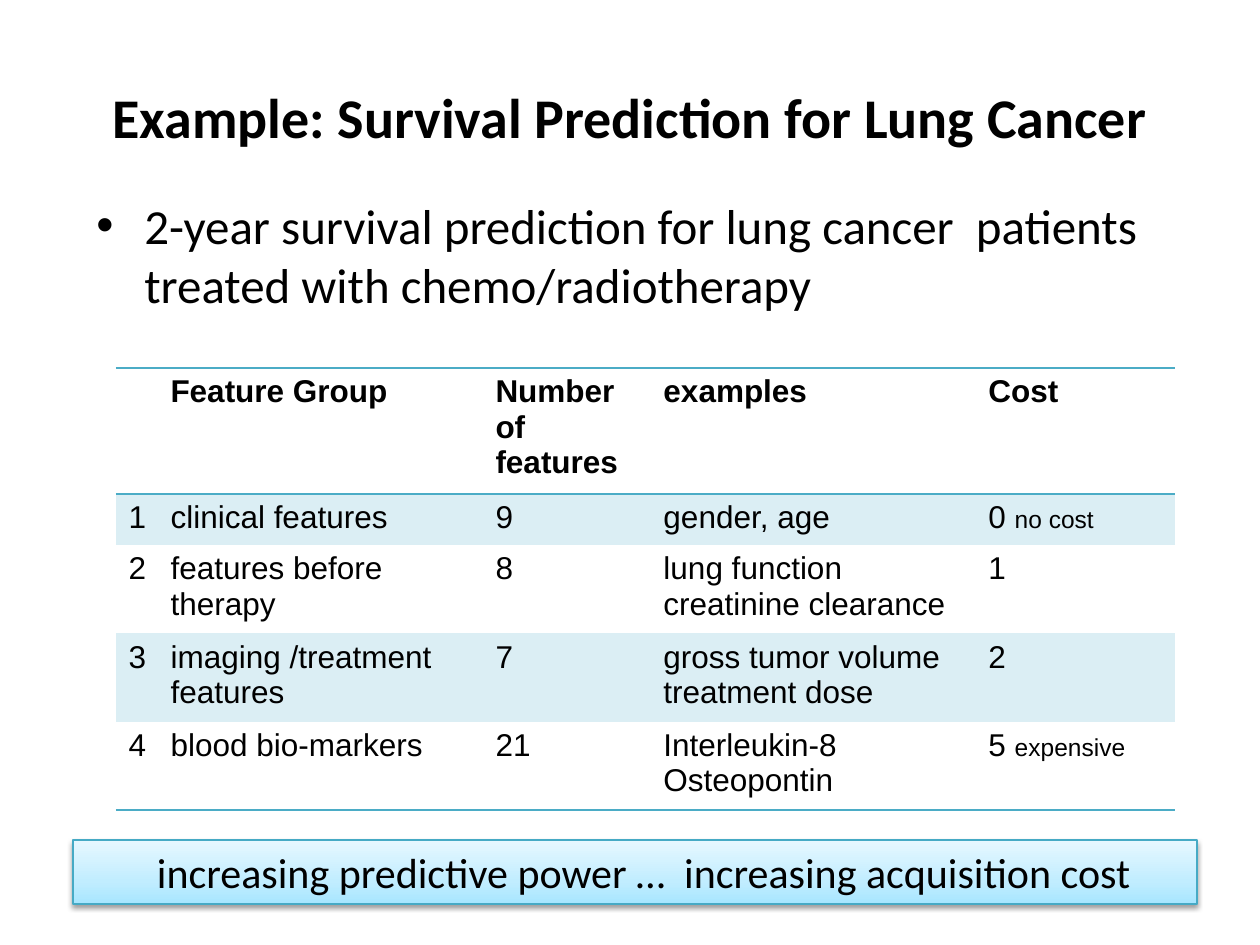
"""Build a slide on survival prediction for lung cancer."""
from copy import deepcopy

from lxml.etree import SubElement
from pptx import Presentation
from pptx.dml.color import RGBColor as RGB
from pptx.enum.shapes import MSO_SHAPE as SHAPE
from pptx.enum.text import MSO_ANCHOR as ANCHOR, PP_ALIGN as ALIGN
from pptx.oxml.ns import qn
from pptx.util import Emu, Pt

PX = 914400 / 126
COLORS = {
    "text": "000000",
    "rule": "4BACC6",
    "band": "DBEEF4",
    "edge": "46AAC5",
    "shadow": "000000",
}
BANNER_STOPS = [(0, "A7E6FF"), (35, "C1EDFF"), (100, "E7F8FF")]
NO_GRID_STYLE = "{2D5ABB26-0587-4C30-8999-92F81FD0307C}"
COL_WIDTHS = [42, 325, 168, 325, 199]
ROW_HEIGHTS = [119, 51, 83, 83, 83]
ROWS = [
    ["", "Feature Group", "Number of features", "examples", "Cost"],
    ["1", "clinical features", "9", "gender, age", ("0 ", "no cost")],
    ["2", "features before therapy", "8", "lung function creatinine clearance", "1"],
    ["3", "imaging /treatment features", "7", "gross tumor volume treatment dose", "2"],
    ["4", "blood bio-markers", "21", "Interleukin-8 Osteopontin", ("5 ", "expensive")],
]


def px(n):
    return Emu(round(n * PX))


def color(name):
    return RGB.from_string(COLORS[name])


def add_run(p, text, size, font="Calibri", bold=False):
    r = p.add_run()
    r.text = text
    r.font.name, r.font.size, r.font.bold = font, Pt(size), bold
    r.font.color.rgb = color("text")


def add_text(slide, box, text, size, bold=False):
    tf = slide.shapes.add_textbox(*map(px, box)).text_frame
    tf.word_wrap = True
    p = tf.paragraphs[0]
    add_run(p, text, size, bold=bold)
    return tf, p


def add_title(slide, box, text):
    tf, p = add_text(slide, box, text, 32, bold=True)
    tf.vertical_anchor = ANCHOR.MIDDLE
    p.alignment = ALIGN.CENTER


def add_bullet(slide, box, text):
    p = add_text(slide, box, text, 28)[1]
    p.space_before = Pt(5.6)
    pPr = p._p.get_or_add_pPr()
    pPr.set("marL", str(px(48)))
    pPr.set("indent", str(px(-48)))
    SubElement(pPr, qn("a:buFont"), typeface="Arial")
    SubElement(pPr, qn("a:buChar"), char="•")


def add_border(cell, side):
    ln = SubElement(cell._tc.get_or_add_tcPr(), qn(f"a:{side}"), w=str(Pt(1)))
    fill = SubElement(ln, qn("a:solidFill"))
    SubElement(fill, qn("a:srgbClr"), val=COLORS["rule"])


def fill_cell(cell, content, row):
    header, last = row == 0, row == len(ROWS) - 1
    if header:
        add_border(cell, "lnT")
    if header or last:
        add_border(cell, "lnB")
    if row % 2:
        cell.fill.solid()
        cell.fill.fore_color.rgb = color("band")
    else:
        cell.fill.background()
    parts = (content,) if isinstance(content, str) else content
    for text, size in zip(parts, (18, 14)):
        add_run(cell.text_frame.paragraphs[0], text, size, "Arial", header)


def add_feature_table(slide, x, y):
    box = (x, y, sum(COL_WIDTHS), sum(ROW_HEIGHTS))
    table = slide.shapes.add_table(len(ROWS), len(COL_WIDTHS), *map(px, box)).table
    table.first_row = table.horz_banding = False
    table._tbl.tblPr.find(qn("a:tableStyleId")).text = NO_GRID_STYLE
    for col, width in zip(table.columns, COL_WIDTHS):
        col.width = px(width)
    for i, (row, height) in enumerate(zip(table.rows, ROW_HEIGHTS)):
        row.height = px(height)
        for cell, content in zip(row.cells, ROWS[i]):
            fill_cell(cell, content, i)


def set_gradient(sp, stops, angle):
    sp.fill.gradient()
    sp.fill.gradient_angle = angle
    gs_list = sp._element.spPr.find(qn("a:gradFill")).find(qn("a:gsLst"))
    gs_list.append(deepcopy(gs_list[0]))
    for stop, (position, value) in zip(sp.fill.gradient_stops, stops):
        stop.position = position / 100
        stop.color.rgb = RGB.from_string(value)


def set_shadow(sp):
    sp.shadow.inherit = False
    effects = sp._element.spPr.find(qn("a:effectLst"))
    shadow = SubElement(effects, qn("a:outerShdw"), blurRad=str(Pt(3.1)),
                        dist=str(Pt(1.6)), dir="5400000", rotWithShape="0")
    clr = SubElement(shadow, qn("a:srgbClr"), val=COLORS["shadow"])
    SubElement(clr, qn("a:alpha"), val="38000")


def add_banner(slide, box, text):
    sp = slide.shapes.add_shape(SHAPE.RECTANGLE, *map(px, box))
    set_gradient(sp, BANNER_STOPS, 90)
    sp.line.color.rgb = color("edge")
    sp.line.width = Pt(0.75)
    set_shadow(sp)
    tf = sp.text_frame
    tf.word_wrap = True
    tf.vertical_anchor = ANCHOR.MIDDLE
    tf.margin_left = px(84)
    p = tf.paragraphs[0]
    p.alignment = ALIGN.LEFT
    add_run(p, text, 24)


def main():
    prs = Presentation()
    prs.slide_width, prs.slide_height = px(1260), px(945)
    slide = prs.slides.add_slide(prs.slide_layouts[6])
    add_title(slide, (63, 38, 1134, 157), "Example: Survival Prediction for Lung Cancer")
    add_feature_table(slide, 116, 368)
    add_bullet(slide, (84, 189, 1134, 624),
               "2-year survival prediction for lung cancer  patients "
               "treated with chemo/radiotherapy")
    add_banner(slide, (73, 840, 1124, 64),
               "increasing predictive power …  increasing acquisition cost")
    prs.save("out.pptx")


if __name__ == "__main__":
    main()
